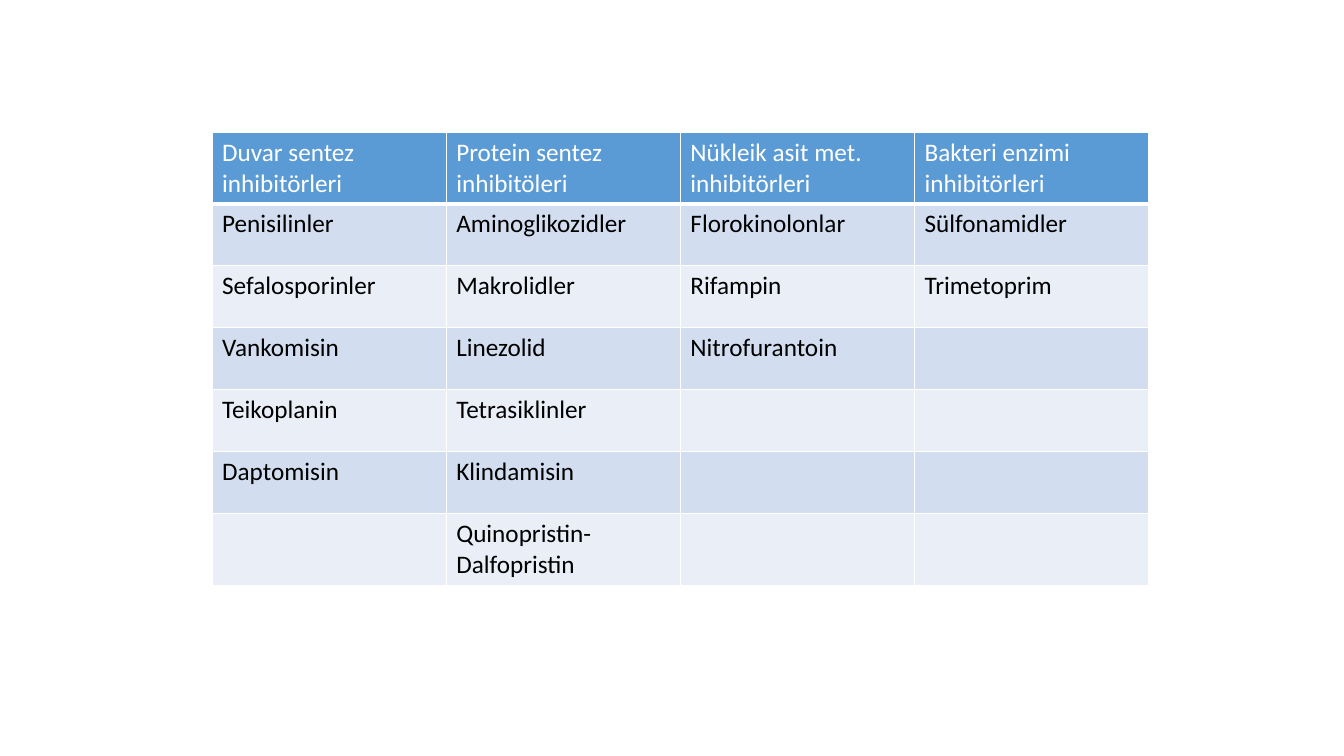
from itertools import product

from lxml.etree import SubElement
from pptx import Presentation
from pptx.dml.color import RGBColor as RGB
from pptx.oxml.ns import qn
from pptx.util import Pt

PX = 9525  # EMU per px, 96 px to the inch

THEME = {
    "font": "Calibri",
    "size": Pt(18),
    "header_text": RGB.from_string("FFFFFF"),
    "body_text": RGB.from_string("000000"),
    "header_fill": RGB.from_string("5B9BD5"),
    "bands": [RGB.from_string("EAEFF7"), RGB.from_string("D2DEEF")],
    "border": "FFFFFF",
}

# Each drug class with its members
DRUG_CLASSES = [
    ["Duvar sentez inhibitörleri", "Penisilinler", "Sefalosporinler",
     "Vankomisin", "Teikoplanin", "Daptomisin"],
    ["Protein sentez inhibitöleri", "Aminoglikozidler", "Makrolidler",
     "Linezolid", "Tetrasiklinler", "Klindamisin", "Quinopristin- Dalfopristin"],
    ["Nükleik asit met. inhibitörleri", "Florokinolonlar", "Rifampin",
     "Nitrofurantoin"],
    ["Bakteri enzimi inhibitörleri", "Sülfonamidler", "Trimetoprim"],
]
LEFT, TOP, COL_WIDTH = 202, 126, 223
ROW_HEIGHTS = [67, 59, 59, 59, 59, 59, 67]


def add_border(cell, side, width):
    ln = SubElement(cell._tc.get_or_add_tcPr(), qn(f"a:ln{side}"), w=str(Pt(width)))
    fill = SubElement(ln, qn("a:solidFill"))
    SubElement(fill, qn("a:srgbClr"), val=THEME["border"])


# Slide
prs = Presentation()
prs.slide_width, prs.slide_height = 1280 * PX, 720 * PX
slide = prs.slides.add_slide(prs.slide_layouts[6])

# Table grid
n_rows, n_cols = len(ROW_HEIGHTS), len(DRUG_CLASSES)
table = slide.shapes.add_table(
    n_rows, n_cols, LEFT * PX, TOP * PX,
    n_cols * COL_WIDTH * PX, sum(ROW_HEIGHTS) * PX).table
for column in table.columns:
    column.width = COL_WIDTH * PX
for row, height in zip(table.rows, ROW_HEIGHTS):
    row.height = height * PX

# Cells: header row, then alternating bands
for i, j in product(range(n_rows), range(n_cols)):
    cell = table.cell(i, j)
    header = i == 0
    for side in "LRTB":
        add_border(cell, side, 3 if header and side == "B" else 1)
    cell.fill.solid()
    cell.fill.fore_color.rgb = THEME["header_fill"] if header else THEME["bands"][i % 2]

    p = cell.text_frame.paragraphs[0]
    p.font.name, p.font.size, p.font.bold = THEME["font"], THEME["size"], False
    p.font.color.rgb = THEME["header_text"] if header else THEME["body_text"]
    if i < len(DRUG_CLASSES[j]):
        p.add_run().text = DRUG_CLASSES[j][i]

prs.save("out.pptx")
